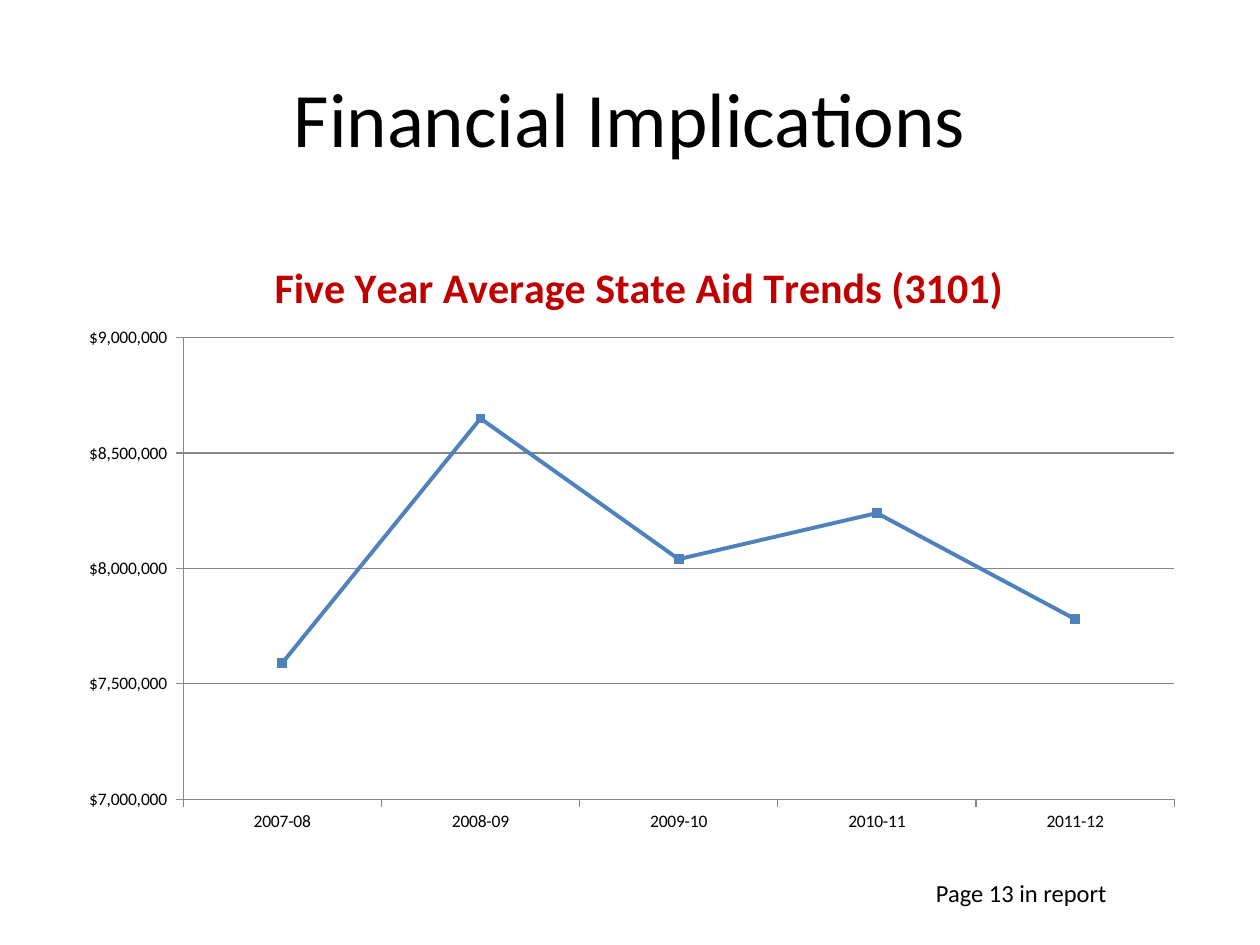
from dataclasses import dataclass

from lxml import etree
from pptx import Presentation
from pptx.chart.data import CategoryChartData
from pptx.dml.color import RGBColor
from pptx.enum.chart import XL_CHART_TYPE, XL_MARKER_STYLE, XL_TICK_MARK
from pptx.enum.text import MSO_ANCHOR, PP_ALIGN
from pptx.oxml.ns import qn
from pptx.util import Pt

LINE_MARKERS = XL_CHART_TYPE.LINE_MARKERS
SQUARE = XL_MARKER_STYLE.SQUARE
TICK_OUTSIDE, TICK_NONE = XL_TICK_MARK.OUTSIDE, XL_TICK_MARK.NONE
MIDDLE, TOP = MSO_ANCHOR.MIDDLE, MSO_ANCHOR.TOP
CENTER, LEFT = PP_ALIGN.CENTER, PP_ALIGN.LEFT

# Content
TITLE = "Financial Implications"
PAGE_NOTE = "Page 13 in report"
CHART_TITLE = "Five Year Average State Aid Trends (3101)"
SERIES_NAME = "Series 1"
STATE_AID = {
    "2007-08": 7590000,
    "2008-09": 8650000,
    "2009-10": 8040000,
    "2010-11": 8240000,
    "2011-12": 7780000,
}
AXIS_MIN, AXIS_MAX, AXIS_STEP = 7000000, 9000000, 500000
AXIS_FORMAT = '"$"#,##0_)'

# Layout in px, 100 px to the inch: left, top, width, height
PX = 9144
SLIDE_SIZE = (1000, 750)
TITLE_BOX = (50, 30, 900, 125)
CHART_BOX = (50, 175, 900, 495)
NOTE_BOX = (733, 692, 200, 34)

# Positions inside the chart, as fractions of its size
CHART_TITLE_LAYOUT = {"x": 0.18, "y": 0.05}
PLOT_LAYOUT = {"x": 0.106, "y": 0.188, "w": 0.874, "h": 0.74}


@dataclass(frozen=True)
class Theme:
    font: str = "Calibri"
    text: RGBColor = RGBColor(0, 0, 0)
    accent: RGBColor = RGBColor(0xC0, 0, 0)
    series: RGBColor = RGBColor(0x4F, 0x81, 0xBD)
    grid: RGBColor = RGBColor(0x87, 0x87, 0x87)
    title_size: int = 44
    chart_title_size: int = 24
    note_size: int = 14
    axis_size: int = 10
    series_width: float = 2.25
    grid_width: float = 0.75
    marker_size: int = 5


THEME = Theme()


def to_emu(box):
    return [length * PX for length in box]


def style_font(font, size, color=THEME.text, bold=False):
    font.name = THEME.font
    font.size = Pt(size)
    font.color.rgb = color
    font.bold = bold


def style_line(line, color, width):
    line.color.rgb = color
    line.width = Pt(width)


def add_text(slide, text, box, size, alignment, anchor):
    frame = slide.shapes.add_textbox(*to_emu(box)).text_frame
    frame.word_wrap = True
    frame.vertical_anchor = anchor
    paragraph = frame.paragraphs[0]
    paragraph.text = text
    paragraph.alignment = alignment
    style_font(paragraph.font, size)


def set_layout(layout, fractions, target=None):
    """Fill a c:layout element with a manual position."""
    for child in list(layout):
        layout.remove(child)
    manual = etree.SubElement(layout, qn("c:manualLayout"))
    settings = [("layoutTarget", target)] if target else []
    settings += [(f"{key}Mode", "edge") for key in ("x", "y")]
    settings += fractions.items()
    for name, value in settings:
        etree.SubElement(manual, qn(f"c:{name}")).set("val", str(value))


def get_layout(parent, position):
    layout = parent.find(qn("c:layout"))
    if layout is None:
        layout = parent.makeelement(qn("c:layout"))
        parent.insert(position, layout)
    return layout


def add_trend_chart(slide):
    data = CategoryChartData(number_format=AXIS_FORMAT)
    data.categories = list(STATE_AID)
    data.add_series(SERIES_NAME, list(STATE_AID.values()))
    chart = slide.shapes.add_chart(LINE_MARKERS, *to_emu(CHART_BOX), data).chart
    style_font(chart.font, THEME.axis_size)
    chart.has_legend = False

    # Chart title
    chart.has_title = True
    title_frame = chart.chart_title.text_frame
    title_frame.text = CHART_TITLE
    style_font(title_frame.paragraphs[0].font, THEME.chart_title_size,
               THEME.accent, bold=True)
    chart.chart_title.include_in_layout = False
    set_layout(get_layout(chart.chart_title.format.fill and
                          chart._chartSpace.chart.find(qn("c:title")), 1),
               CHART_TITLE_LAYOUT)

    # Plot and series
    plot = chart.plots[0]
    plot.vary_by_categories = False
    set_layout(get_layout(chart._chartSpace.chart.plotArea, 0),
               PLOT_LAYOUT, target="inner")
    series = plot.series[0]
    series.smooth = False
    style_line(series.format.line, THEME.series, THEME.series_width)
    marker = series.marker
    marker.style = SQUARE
    marker.size = THEME.marker_size
    marker.format.fill.solid()
    marker.format.fill.fore_color.rgb = THEME.series
    marker.format.line.color.rgb = THEME.series

    # Axes
    for axis in (chart.category_axis, chart.value_axis):
        axis.major_tick_mark = TICK_OUTSIDE
        axis.minor_tick_mark = TICK_NONE
        style_line(axis.format.line, THEME.grid, THEME.grid_width)
        style_font(axis.tick_labels.font, THEME.axis_size)
    value_axis = chart.value_axis
    value_axis.minimum_scale = AXIS_MIN
    value_axis.maximum_scale = AXIS_MAX
    value_axis.major_unit = AXIS_STEP
    value_axis.tick_labels.number_format = AXIS_FORMAT
    value_axis.tick_labels.number_format_is_linked = False
    value_axis.has_major_gridlines = True
    style_line(value_axis.major_gridlines.format.line, THEME.grid, THEME.grid_width)


def main():
    presentation = Presentation()
    presentation.slide_width, presentation.slide_height = to_emu(SLIDE_SIZE)
    slide = presentation.slides.add_slide(presentation.slide_layouts[6])
    add_text(slide, TITLE, TITLE_BOX, THEME.title_size, CENTER, MIDDLE)
    add_trend_chart(slide)
    add_text(slide, PAGE_NOTE, NOTE_BOX, THEME.note_size, LEFT, TOP)
    presentation.save("out.pptx")


if __name__ == "__main__":
    main()
